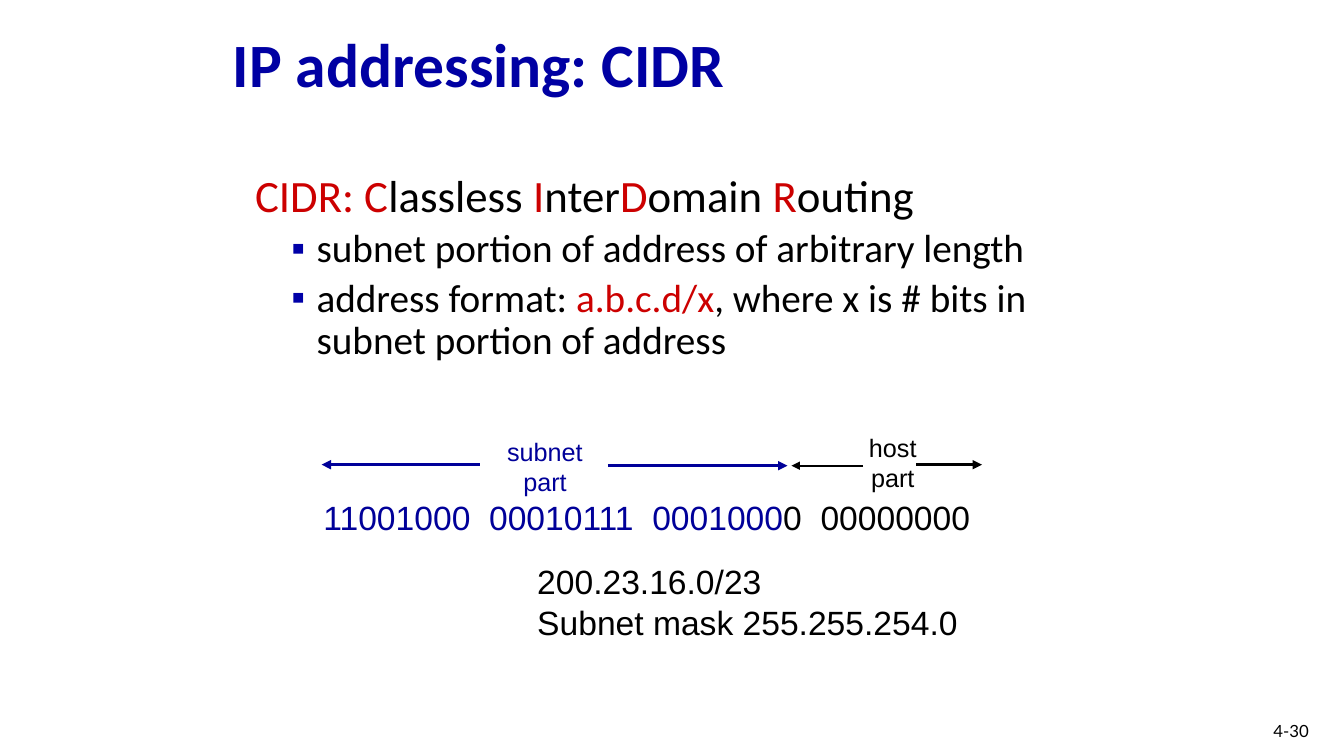
from lxml.etree import SubElement
from pptx import Presentation
from pptx.dml.color import RGBColor
from pptx.enum.shapes import MSO_CONNECTOR
from pptx.enum.text import MSO_ANCHOR, MSO_AUTO_SIZE, PP_ALIGN
from pptx.oxml.ns import qn
from pptx.util import Inches, Pt

CELL = 0.1  # grid cell in inches; the slide is 133.33 columns by 75 rows
TITLE_BLUE, BULLET_BLUE, SUBNET_BLUE = "0000A3", "0000A8", "000099"
RED, BLACK, WHITE = "CC0000", "000000", "FFFFFF"


def color(hex_value):
    return RGBColor.from_string(hex_value)


def cells(*counts):
    return [Inches(count * CELL) for count in counts]


def place(shape, box):
    shape.left, shape.top, shape.width, shape.height = cells(*box)


def write(paragraph, parts, font, size, bold=False):
    """Fill a paragraph with (text, colour) parts."""
    for text, tint in parts:
        run = paragraph.add_run()
        run.text = text
        run.font.name, run.font.size, run.font.bold = font, Pt(size), bold
        run.font.color.rgb = color(tint)


def set_bullet(paragraph, indent, hanging, char=None):
    properties = paragraph._p.get_or_add_pPr()
    properties.set("marL", str(Inches(indent)))
    properties.set("indent", str(Inches(-hanging)))
    if char is None:
        SubElement(properties, qn("a:buNone"))
        return
    bullet_color = SubElement(properties, qn("a:buClr"))
    SubElement(bullet_color, qn("a:srgbClr"), val=BULLET_BLUE)
    SubElement(properties, qn("a:buFont"), typeface="Arial")
    SubElement(properties, qn("a:buChar"), char=char)


def add_label(slide, box, lines, size=24, font="Arial",
              align=PP_ALIGN.LEFT, wrap=False):
    label = slide.shapes.add_textbox(*cells(*box))
    frame = label.text_frame
    frame.word_wrap = wrap
    frame.auto_size = MSO_AUTO_SIZE.NONE if wrap else MSO_AUTO_SIZE.SHAPE_TO_FIT_TEXT
    for number, parts in enumerate(lines):
        paragraph = frame.add_paragraph() if number else frame.paragraphs[0]
        paragraph.alignment = align
        write(paragraph, parts, font, size)
    return label


def add_arrow(slide, start, end, row, tint, width):
    arrow = slide.shapes.add_connector(
        MSO_CONNECTOR.STRAIGHT, *cells(start, row, end, row))
    arrow.line.color.rgb = color(tint)
    arrow.line.width = Pt(width)
    SubElement(arrow.line._get_or_add_ln(), qn("a:tailEnd"), type="triangle")
    SubElement(arrow._element.spPr, qn("a:effectLst"))


def fill_title(slide, box):
    title = slide.shapes.title
    place(title, box)
    frame = title.text_frame
    frame.vertical_anchor = MSO_ANCHOR.MIDDLE
    frame.auto_size = MSO_AUTO_SIZE.NONE
    heading = frame.paragraphs[0]
    heading.alignment = PP_ALIGN.LEFT
    heading.line_spacing = 0.9
    write(heading, [("IP addressing: CIDR", TITLE_BLUE)], "Calibri", 44, bold=True)


def fill_body(slide, box):
    body = slide.placeholders[1]
    place(body, box)
    frame = body.text_frame
    frame.auto_size = MSO_AUTO_SIZE.NONE
    definition = [("CIDR: C", RED), ("lassless ", BLACK), ("I", RED), ("nter", BLACK),
                  ("D", RED), ("omain ", BLACK), ("R", RED), ("outing", BLACK)]
    points = [
        [("subnet portion of address of arbitrary length", BLACK)],
        [("address format: ", BLACK), ("a.b.c.d/x", RED),
         (", where x is # bits in subnet portion of address", BLACK)],
    ]
    for number, parts in enumerate([definition] + points):
        paragraph = frame.add_paragraph() if number else frame.paragraphs[0]
        paragraph.level = 1 if number else 0
        paragraph.line_spacing = 0.9
        paragraph.space_before = Pt(5 if number else 10)
        if number:
            set_bullet(paragraph, 0.76, 0.25, "▪")
        else:
            set_bullet(paragraph, 0.39, 0.24)
        write(paragraph, parts, "Calibri", 28 if number else 32)


def draw_address(slide, left, top):
    """Binary address, its two measured parts and the dotted notation."""
    # Address bits
    add_label(slide, (left, top + 6.4, 67, 5),
              [[("11001000  00010111  0001000", SUBNET_BLUE), ("0  00000000", BLACK)]])

    # Names of the two parts
    for name, tint, column, row, columns in (
            ("subnet", SUBNET_BLUE, 18.2, 0.4, 9.5), ("host", BLACK, 54.1, 0, 6.7)):
        add_label(slide, (left + column, top + row, columns, 7),
                  [[(name, tint)], [("part", tint)]], 18, align=PP_ALIGN.CENTER)

    # Arrows pointing from each name to the ends of its part
    for start, end, row, tint, width in (
            (16.5, 0.8, 3.7, SUBNET_BLUE, 2.25), (29.2, 47, 3.8, SUBNET_BLUE, 2.25),
            (54.5, 47.4, 3.8, BLACK, 1.5), (59.8, 66.3, 3.7, BLACK, 2.25)):
        add_arrow(slide, left + start, left + end, top + row, tint, width)

    # Dotted notation and mask
    add_label(slide, (left + 21.2, top + 12.8, 44.1, 9.1),
              [[("200.23.16.0/23", BLACK)], [("Subnet mask 255.255.254.0", BLACK)]])


def add_page_number(slide, box):
    page = add_label(slide, box, [[("4-30", BLACK)]], 12, "Lato",
                     PP_ALIGN.RIGHT, wrap=True)
    page.text_frame.vertical_anchor = MSO_ANCHOR.MIDDLE


def main():
    deck = Presentation()
    deck.slide_width, deck.slide_height = Inches(13.33), Inches(7.5)
    slide = deck.slides.add_slide(deck.slide_layouts[1])
    slide.background.fill.solid()
    slide.background.fill.fore_color.rgb = color(WHITE)
    fill_title(slide, (22.1, 2.1, 85, 9.3))
    fill_body(slide, (22.8, 16.7, 88.7, 34.7))
    draw_address(slide, 31.1, 42.4)
    add_page_number(slide, (100.8, 70.5, 30, 4))
    deck.save("out.pptx")


if __name__ == "__main__":
    main()
